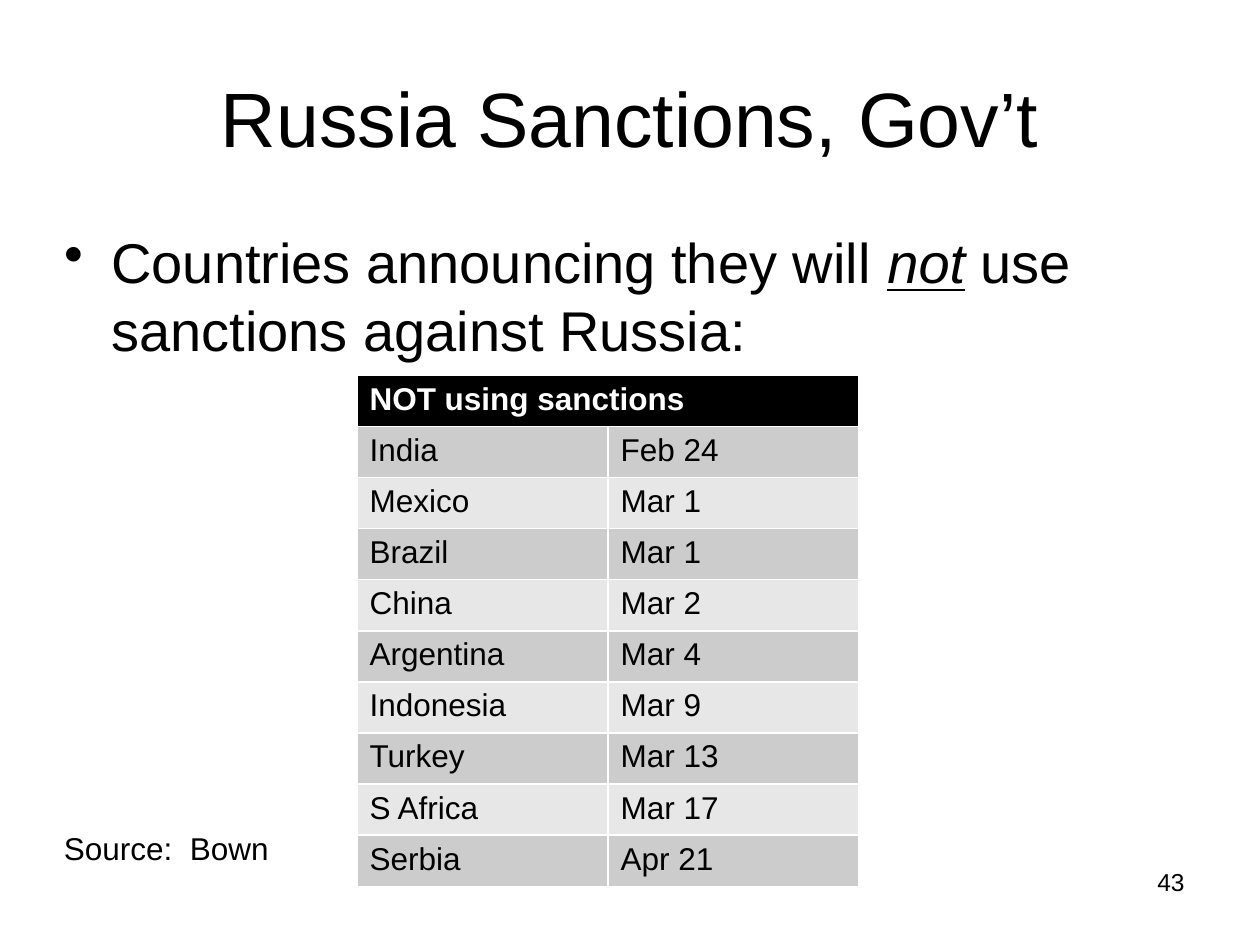
from lxml import etree
from pptx import Presentation
from pptx import util as u
from pptx.dml import color
from pptx.enum import text
from pptx.oxml import ns

Pt = u.Pt


def style(para, size, ink="000000", bold=False):
    font = para.font
    font.name, font.size, font.bold = "Arial", Pt(size), bold
    font.color.rgb = color.RGBColor.from_string(ink)


def write(words, box, size, side=text.PP_ALIGN.LEFT):
    frame = slide.shapes.add_textbox(*map(Pt, box)).text_frame
    frame.word_wrap = True
    para = frame.paragraphs[0]
    para.alignment = side
    for word in words:
        para.add_run().text = word
    style(para, size)
    return frame


deck = Presentation()
deck.slide_width, deck.slide_height = Pt(720), Pt(540)
slide = deck.slides.add_slide(deck.slide_layouts[6])

write(["43"], (516, 492, 168, 37.5), 14, text.PP_ALIGN.RIGHT)
title = write(["Russia Sanctions, Gov’t"], (36, 21.6, 648, 90), 44, text.PP_ALIGN.CENTER)
title.vertical_anchor = text.MSO_ANCHOR.MIDDLE

body = write(
    ["Countries announcing they will ", "not", " use sanctions against Russia:"],
    (29.5, 126.7, 654.5, 365), 32)
para = body.paragraphs[0]
para.space_before = Pt(6.4)
para.runs[1].font.italic = para.runs[1].font.underline = True
props = para._p.get_or_add_pPr()
props.set("marL", str(Pt(27)))
props.set("indent", str(Pt(-27)))
bullet = etree.Element(ns.qn("a:buChar"), char="•")
props.find(ns.qn("a:spcBef")).addnext(bullet)

rows = [
    ("NOT using sanctions", ""),
    ("India", "Feb 24"),
    ("Mexico", "Mar 1"),
    ("Brazil", "Mar 1"),
    ("China", "Mar 2"),
    ("Argentina", "Mar 4"),
    ("Indonesia", "Mar 9"),
    ("Turkey", "Mar 13"),
    ("S Africa", "Mar 17"),
    ("Serbia", "Apr 21"),
]
grid = slide.shapes.add_table(
    len(rows), 2, Pt(204), Pt(214.5), Pt(287), Pt(292)).table
grid.cell(0, 0).merge(grid.cell(0, 1))
for r, row in enumerate(rows):
    head = r == 0
    fill = "000000" if head else ("E7E7E7", "CCCCCC")[r % 2]
    for c, word in enumerate(row):
        cell = grid.cell(r, c)
        cell.fill.solid()
        cell.fill.fore_color.rgb = color.RGBColor.from_string(fill)
        if word:
            cell.text = word
            style(cell.text_frame.paragraphs[0], 18, "FFFFFF" if head else "000000", head)

write(["Source:  Bown"], (29.5, 470, 135.5, 29), 18)

deck.save("out.pptx")
